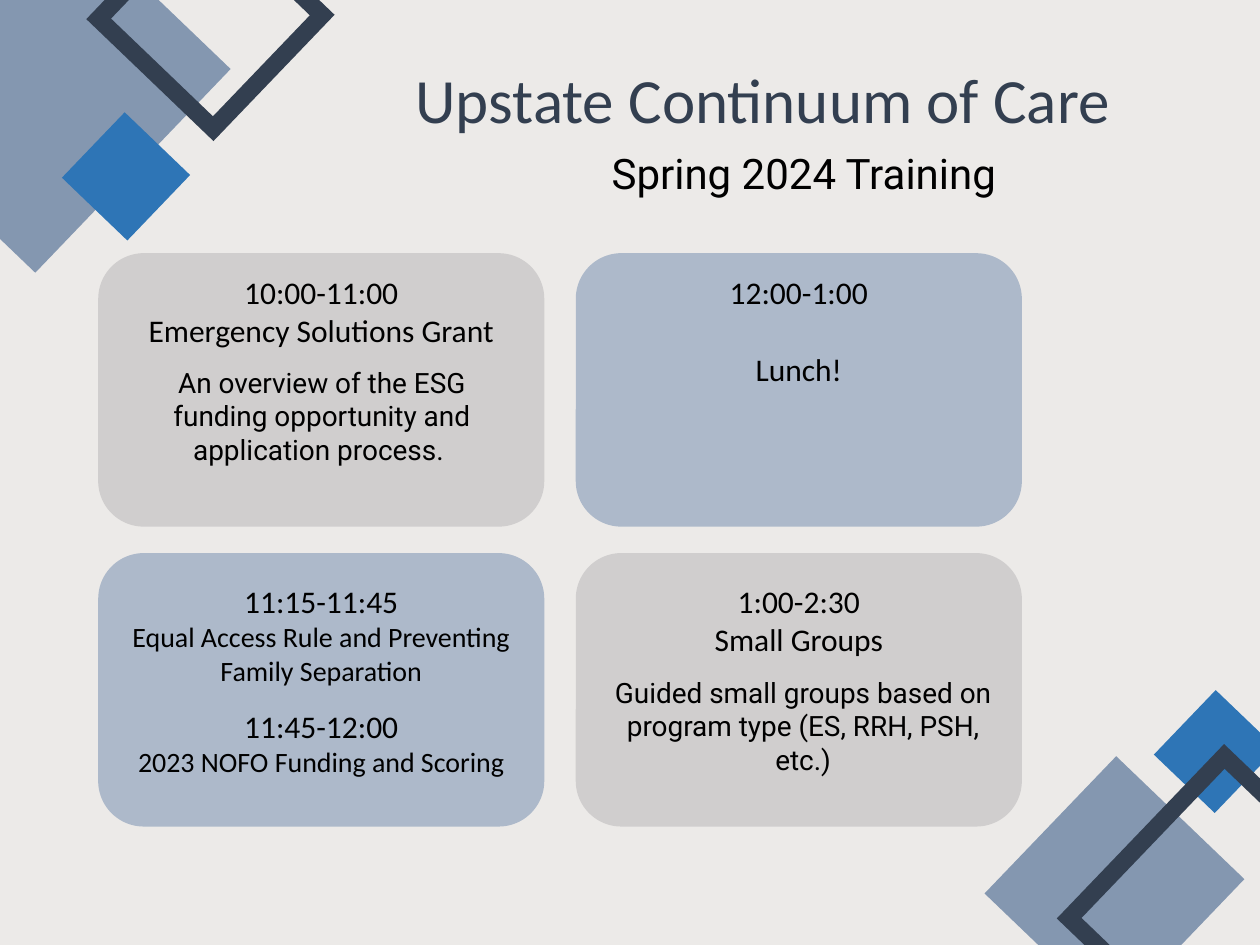
from typing import NamedTuple

from lxml.etree import SubElement
from pptx import Presentation
from pptx.dml.color import RGBColor
from pptx.enum.shapes import MSO_SHAPE as Shape
from pptx.enum.text import MSO_AUTO_SIZE as Fit, PP_ALIGN as Align
from pptx.oxml.ns import qn
from pptx.util import Inches, Pt

# Colours
PAPER = RGBColor(0xEC, 0xEA, 0xE8)
NAVY = RGBColor(0x33, 0x3F, 0x50)
SLATE = RGBColor(0x84, 0x97, 0xB0)
BLUE = RGBColor(0x2E, 0x75, 0xB6)
GREY = RGBColor(0xD0, 0xCE, 0xCE)
MIST = RGBColor(0xAD, 0xB9, 0xCA)
BLACK = RGBColor(0, 0, 0)

# Card grid, in inches
LEFT, TOP = 0.78, 2.01
WIDE, HIGH = 3.54, 2.17
STEP_X, STEP_Y = 3.79, 2.38
TILT = 43.8


class Box(NamedTuple):
    x: float
    y: float
    w: float
    h: float


class Tile(NamedTuple):
    box: Box
    color: RGBColor
    hollow: bool = False


class Line(NamedTuple):
    text: str
    size: int = 18
    font: str = "Calibri"
    before: int = 0
    color: RGBColor = BLACK


class Note(NamedTuple):
    col: int
    row: int
    drop: float  # distance below the top of the card
    high: float
    lines: list[Line]
    inset: float = 0


def cell(col: int, row: int) -> Box:
    return Box(LEFT + col * STEP_X, TOP + row * STEP_Y, WIDE, HIGH)


def add_form(shapes, kind, box: Box, color: RGBColor, hollow: bool = False):
    form = shapes.add_shape(kind, *map(Inches, box))
    form.shadow.inherit = False
    if hollow:
        form.fill.background()
        form.line.color.rgb = color
        form.line.width = Pt(10)
        SubElement(form.line._get_or_add_ln(), qn("a:miter"), lim="800000")
    else:
        form.fill.solid()
        form.fill.fore_color.rgb = color
        form.line.fill.background()
    return form


def add_tiles(slide, tiles: list[Tile]) -> None:
    group = slide.shapes.add_group_shape()
    for tile in tiles:
        form = add_form(group.shapes, Shape.RECTANGLE, *tile)
        form.rotation = TILT


def add_text(slide, box: Box, lines: list[Line], align=Align.CENTER) -> None:
    frame = slide.shapes.add_textbox(*map(Inches, box)).text_frame
    frame.word_wrap = True
    frame.auto_size = Fit.SHAPE_TO_FIT_TEXT
    for i, line in enumerate(lines):
        para = frame.add_paragraph() if i else frame.paragraphs[0]
        para.alignment = align
        if line.before:
            para.space_before = Pt(line.before)
        run = para.add_run()
        run.text = line.text
        run.font.size = Pt(line.size)
        run.font.name = line.font
        run.font.color.rgb = line.color


CORNERS = [
    [  # top left
        Tile(Box(-0.95, -0.57, 2.33, 2.24), SLATE),
        Tile(Box(1.04, -0.49, 1.26, 1.25), NAVY, True),
        Tile(Box(0.64, 1.04, 0.72, 0.72), BLUE),
    ],
    [  # bottom right
        Tile(Box(8.14, 6.28, 1.41, 1.51), SLATE),
        Tile(Box(9.31, 5.61, 0.67, 0.71), BLUE),
        Tile(Box(8.87, 6.33, 1.66, 1.78), NAVY, True),
    ],
]

NOTES = [
    Note(0, 0, 0.11, 0.71,
         [Line("10:00-11:00"), Line("Emergency Solutions Grant")]),
    Note(0, 1, 0.18, 0.94,
         [Line("11:15-11:45"),
          Line("Equal Access Rule and Preventing Family Separation", 16)]),
    Note(1, 0, 0.11, 1.01,
         [Line("12:00-1:00"), Line("Lunch!", before=22)]),
    Note(1, 1, 0.18, 0.71, [Line("1:00-2:30"), Line("Small Groups")]),
    Note(0, 1, 1.17, 0.67,
         [Line("11:45-12:00"), Line("2023 NOFO Funding and Scoring", 16)]),
    Note(0, 0, 0.84, 0.91,
         [Line("An overview of the ESG funding opportunity and "
               "application process. ", 16, "Roboto")], 0.16),
    Note(1, 1, 0.92, 0.91,
         [Line("Guided small groups based on program type "
               "(ES, RRH, PSH, etc.)", 16, "Roboto")], 0.19),
]


def main() -> None:
    deck = Presentation()
    deck.slide_width, deck.slide_height = Inches(10), Inches(7.5)
    slide = deck.slides.add_slide(deck.slide_layouts[6])
    slide.background.fill.solid()
    slide.background.fill.fore_color.rgb = PAPER

    # Corner diamonds
    for tiles in CORNERS:
        add_tiles(slide, tiles)

    # Heading
    add_text(slide, Box(3.2, 0.43, 6.35, 0.71),
             [Line("Upstate Continuum of Care", 36, color=NAVY)], Align.LEFT)
    add_text(slide, Box(4.3, 1.12, 4.16, 0.5),
             [Line("Spring 2024 Training", 24, "Roboto")])

    # Cards in alternating colours
    for row in range(2):
        for col in range(2):
            color = MIST if (row + col) % 2 else GREY
            add_form(slide.shapes, Shape.ROUNDED_RECTANGLE,
                     cell(col, row), color)

    # Schedule
    for note in NOTES:
        card = cell(note.col, note.row)
        wide = 3.23 if note.inset else card.w
        box = Box(card.x + note.inset, card.y + note.drop, wide, note.high)
        add_text(slide, box, note.lines)

    deck.save("out.pptx")


if __name__ == "__main__":
    main()
